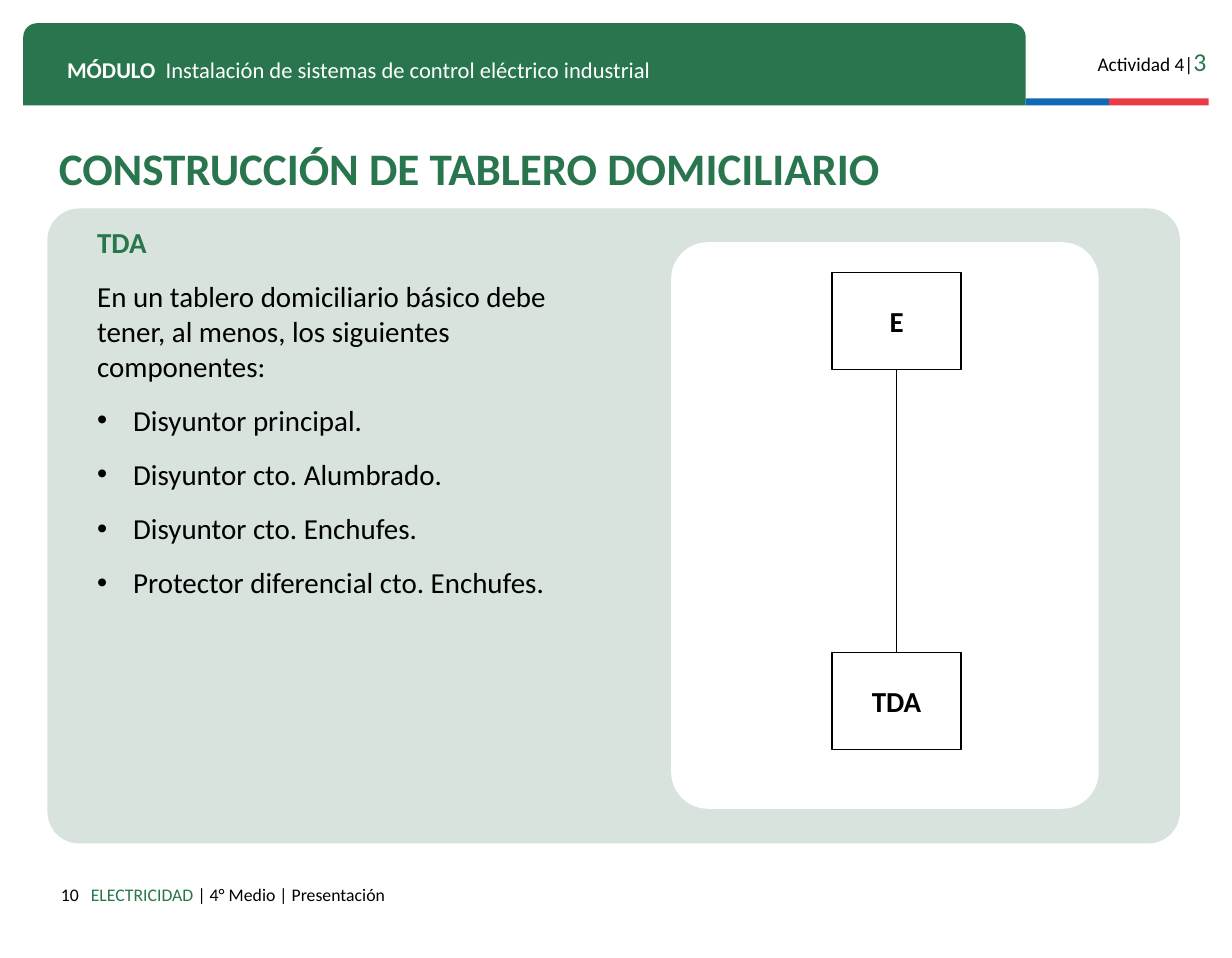
from dataclasses import dataclass

import lxml.etree
import pptx
import pptx.dml.color
import pptx.enum.shapes
import pptx.enum.text
import pptx.oxml.ns
import pptx.util

Cm = pptx.util.Cm
Pt = pptx.util.Pt
Shape = pptx.enum.shapes.MSO_SHAPE
Align = pptx.enum.text.PP_ALIGN
Anchor = pptx.enum.text.MSO_ANCHOR
qn = pptx.oxml.ns.qn

GREEN, PALE, WHITE, BLACK = "29754D", "D7E3DC", "FFFFFF", "000000"
BLUE, RED = "0F69B4", "EB3C46"
INSET = 0.25


@dataclass
class Span:
    text: str
    size: float
    color: str = BLACK
    bold: bool = False


@dataclass
class Para:
    spans: list[Span]
    align: Align = Align.LEFT
    before: float = 0
    line: float = 1.0
    bullet: bool = False


@dataclass
class Panel:
    kind: Shape
    place: tuple[float, float, float, float]
    fill: str
    adjustments: tuple[float, ...] = ()


@dataclass
class Label:
    place: tuple[float, float, float, float]
    paras: list[Para]
    anchor: Anchor = Anchor.TOP
    inset: float = INSET


def rgb(color: str) -> pptx.dml.color.RGBColor:
    return pptx.dml.color.RGBColor.from_string(color)


def set_all(target, values: dict) -> None:
    for name, value in values.items():
        setattr(target, name, value)


def add_bullet(para) -> None:
    properties = para._p.get_or_add_pPr()
    properties.set("marL", str(Cm(0.79)))
    properties.set("indent", str(-Cm(0.79)))
    color = lxml.etree.SubElement(properties, qn("a:buClr"))
    lxml.etree.SubElement(color, qn("a:srgbClr"), val=BLACK)
    lxml.etree.SubElement(properties, qn("a:buFont"), typeface="Arial")
    lxml.etree.SubElement(properties, qn("a:buChar"), char="•")


def write(frame, paras: list[Para], anchor: Anchor, inset: float) -> None:
    set_all(frame, {
        "word_wrap": True, "vertical_anchor": anchor,
        "margin_left": Cm(INSET), "margin_right": Cm(INSET),
        "margin_top": Cm(inset), "margin_bottom": Cm(inset),
    })
    for index, item in enumerate(paras):
        para = frame.add_paragraph() if index else frame.paragraphs[0]
        set_all(para, {"alignment": item.align, "line_spacing": item.line,
                       "space_before": Pt(item.before)})
        if item.bullet:
            add_bullet(para)
        for span in item.spans:
            run = para.add_run()
            run.text = span.text
            set_all(run.font, {"name": "Calibri", "size": Pt(span.size), "bold": span.bold})
            run.font.color.rgb = rgb(span.color)


def draw_panel(page, panel: Panel):
    shape = page.shapes.add_shape(panel.kind, *map(Cm, panel.place))
    shape.shadow.inherit = False
    shape.fill.solid()
    shape.fill.fore_color.rgb = rgb(panel.fill)
    shape.line.fill.background()
    for index, value in enumerate(panel.adjustments):
        shape.adjustments[index] = value
    return shape


def draw_label(page, label: Label) -> None:
    box = page.shapes.add_textbox(*map(Cm, label.place))
    write(box.text_frame, label.paras, label.anchor, label.inset)


def draw_node(page, top: float, name: str):
    box = draw_panel(page, Panel(Shape.RECTANGLE, (18.24, top, 2.82, 2.13), WHITE))
    box.line.color.rgb = rgb(BLACK)
    box.line.width = Pt(1)
    write(box.text_frame, [Para([Span(name, 18, bold=True)], Align.CENTER)], Anchor.MIDDLE, 0.13)
    return box


def draw_link(page, upper, lower) -> None:
    link = page.shapes.add_connector(pptx.enum.shapes.MSO_CONNECTOR.STRAIGHT, 0, 0, 0, 0)
    link.begin_connect(upper, 2)
    link.end_connect(lower, 0)
    link.line.color.rgb = rgb(BLACK)
    link.line.width = Pt(0.75)
    lxml.etree.SubElement(link._element.spPr, qn("a:effectLst"))


# Header band, stripes and content panels
PANELS = [
    Panel(Shape.ROUND_2_SAME_RECTANGLE, (0.51, 0.51, 21.97, 1.8), GREEN, (0.167, 0)),
    Panel(Shape.RECTANGLE, (22.48, 2.16, 1.83, 0.15), BLUE),
    Panel(Shape.RECTANGLE, (24.31, 2.16, 2.18, 0.15), RED),
    Panel(Shape.ROUNDED_RECTANGLE, (1.04, 4.57, 24.82, 13.92), PALE, (0.05,)),
    Panel(Shape.ROUNDED_RECTANGLE, (14.71, 5.31, 9.37, 12.42), WHITE, (0.086,)),
]

COMPONENTS = [
    "Disyuntor principal.",
    "Disyuntor cto. Alumbrado.",
    "Disyuntor cto. Enchufes.",
    "Protector diferencial cto. Enchufes.",
]
INTRO = "En un tablero domiciliario básico debe tener, al menos, los siguientes componentes:"

# Header, footer, title and body texts
LABELS = [
    Label((23.44, 0.76, 3.25, 0.97),
          [Para([Span("Actividad 4|", 12), Span("3", 16, GREEN)], Align.RIGHT)]),
    Label((1.22, 0.97, 20.68, 0.89),
          [Para([Span("MÓDULO ", 14, WHITE, True),
                 Span(" Instalación de sistemas de control eléctrico industrial", 14, WHITE)])]),
    Label((0.51, 19.13, 1.47, 0.74), [Para([Span("10", 11)], Align.RIGHT)]),
    Label((1.74, 19.13, 18, 0.97),
          [Para([Span("ELECTRICIDAD ", 11, GREEN), Span("| 4° Medio | Presentación", 11)])]),
    Label((1.04, 3.28, 22.15, 0.99),
          [Para([Span("CONSTRUCCIÓN DE TABLERO DOMICILIARIO", 28, GREEN, True)], line=0.8)],
          Anchor.MIDDLE),
    Label((1.88, 4.8, 10.59, 10.19),
          [Para([Span("TDA", 18, GREEN, True)], before=12),
           Para([Span(INTRO, 18)], before=12),
           *[Para([Span(name, 18)], before=12, bullet=True) for name in COMPONENTS]],
          inset=0.13),
]


def main() -> None:
    deck = pptx.Presentation()
    set_all(deck, {"slide_width": Cm(27), "slide_height": Cm(21)})
    page = deck.slides.add_slide(deck.slide_layouts[6])
    for panel in PANELS:
        draw_panel(page, panel)
    for label in LABELS:
        draw_label(page, label)

    # Diagram: supply feeding the distribution board
    supply = draw_node(page, 5.97, "E")
    board = draw_node(page, 14.3, "TDA")
    draw_link(page, supply, board)
    deck.save("out.pptx")


if __name__ == "__main__":
    main()
